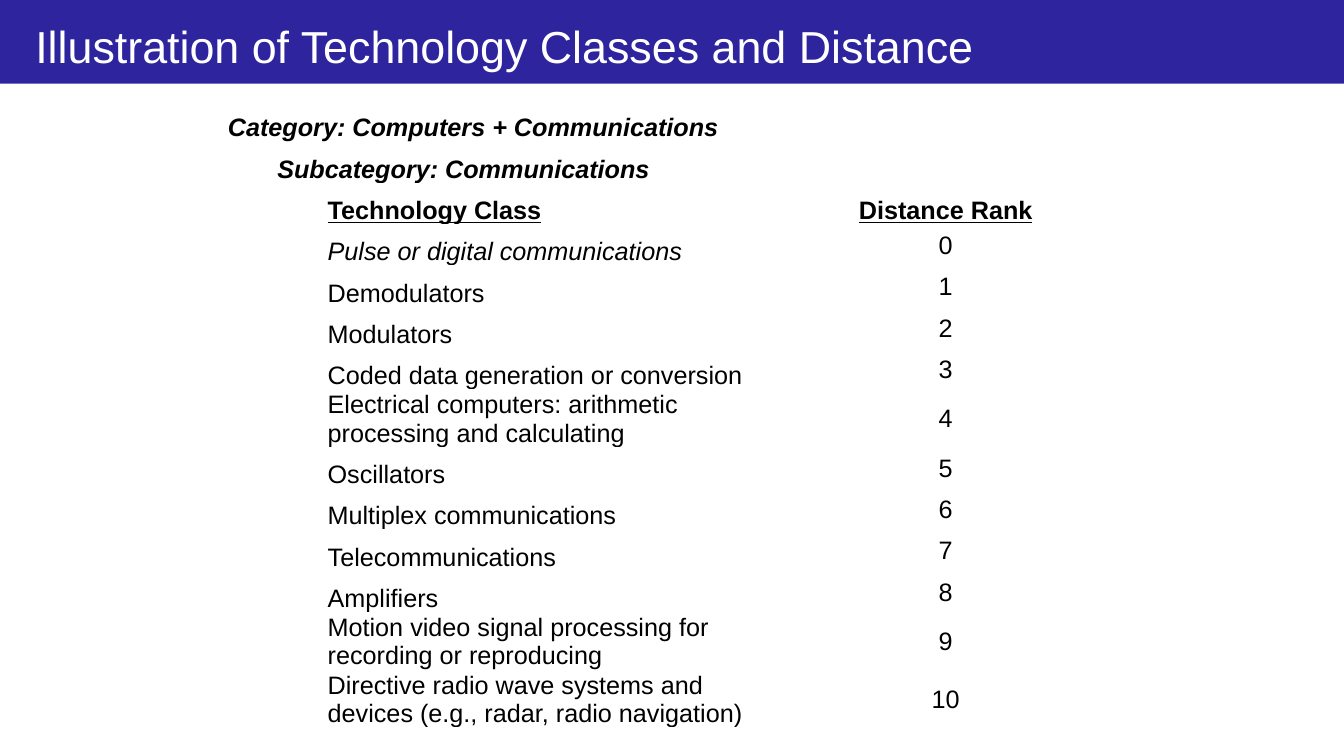
"""Build a slide listing technology classes by their distance rank."""
from dataclasses import dataclass

from pptx import Presentation
from pptx.dml.color import RGBColor
from pptx.enum.shapes import MSO_SHAPE as Shape
from pptx.enum.text import MSO_ANCHOR as Anchor, MSO_AUTO_SIZE as AutoSize, PP_ALIGN as Align
from pptx.slide import Slide
from pptx.table import _Cell as Cell
from pptx.text.text import TextFrame
from pptx.util import Inches, Pt

FONT = "Arial"
BLACK, WHITE, INDIGO = "000000", "FFFFFF", "2E249E"
ROW_HEIGHT = 0.41
COLUMN_WIDTHS = (5.67, 2.92)


@dataclass(frozen=True)
class Style:
    size: float = 18
    color: str = BLACK
    bold: bool = False
    italic: bool = False
    underline: bool = False


@dataclass(frozen=True)
class Entry:
    label: str
    style: Style = Style()
    indent: float = 1
    right: float = 0.1
    rank: str = ""


PLAIN = Style()
HEADING = Style(bold=True, italic=True)
COLUMN_HEADING = Style(bold=True, underline=True)
FOCAL_CLASS = "Pulse or digital communications"
HEADINGS = [
    Entry("Category: Computers + Communications", HEADING, 0.01, 0.01),
    Entry("Subcategory: Communications", HEADING, 0.5, 0.01),
    Entry("Technology Class", COLUMN_HEADING, right=0.01, rank="Distance Rank"),
]
CLASSES = [
    FOCAL_CLASS,
    "Demodulators",
    "Modulators",
    "Coded data generation or conversion",
    "Electrical computers: arithmetic processing and calculating",
    "Oscillators",
    "Multiplex communications",
    "Telecommunications",
    "Amplifiers",
    "Motion video signal processing for recording or reproducing",
    "Directive radio wave systems and devices (e.g., radar, radio navigation)",
]


def rgb(color: str) -> RGBColor:
    return RGBColor.from_string(color)


def write(frame: TextFrame, text: str, style: Style, align: Align = Align.LEFT) -> None:
    paragraph = frame.paragraphs[0]
    paragraph.alignment = align
    run = paragraph.add_run()
    run.text = text
    font = run.font
    font.name, font.size = FONT, Pt(style.size)
    font.bold, font.italic, font.underline = style.bold, style.italic, style.underline
    font.color.rgb = rgb(style.color)


def format_cell(cell: Cell, left: float, right: float, anchor: Anchor) -> None:
    cell.fill.background()
    cell.margin_left, cell.margin_right = Inches(left), Inches(right)
    cell.margin_top, cell.margin_bottom = Inches(0.01), Inches(0)
    cell.vertical_anchor = anchor


def add_title(slide: Slide, text: str) -> None:
    title = slide.shapes.title
    title.left, title.top = Inches(0.25), Inches(0.08)
    title.width, title.height = Inches(9.75), Inches(0.64)
    frame = title.text_frame
    frame.auto_size = AutoSize.NONE
    frame.vertical_anchor = Anchor.TOP
    frame.margin_top = Inches(0.11)
    write(frame, text, Style(size=32, color=WHITE))

    band = slide.shapes.add_shape(
        Shape.RECTANGLE, Inches(0), Inches(0), Inches(13.33), Inches(0.83))
    band.shadow.inherit = False
    band.fill.solid()
    band.fill.fore_color.rgb = rgb(INDIGO)
    band.line.fill.background()
    title.element.addprevious(band.element)


def add_rank_table(slide: Slide, entries: list[Entry]) -> None:
    table = slide.shapes.add_table(
        len(entries), len(COLUMN_WIDTHS), Inches(2.25), Inches(1),
        Inches(sum(COLUMN_WIDTHS)), Inches(ROW_HEIGHT * len(entries))).table
    table.first_row = table.horz_banding = False
    for column, width in zip(table.columns, COLUMN_WIDTHS):
        column.width = Inches(width)
    for index, entry in enumerate(entries):
        table.rows[index].height = Inches(ROW_HEIGHT)
        label, rank = table.cell(index, 0), table.cell(index, 1)
        format_cell(label, entry.indent, entry.right, Anchor.BOTTOM)
        write(label.text_frame, entry.label, entry.style)
        is_heading = entry.style.bold
        format_cell(rank, 0.01, 0.01, Anchor.BOTTOM if is_heading else Anchor.MIDDLE)
        if entry.rank:
            rank_style = entry.style if is_heading else PLAIN
            write(rank.text_frame, entry.rank, rank_style, Align.CENTER)
        else:
            label.merge(rank)


def main() -> None:
    presentation = Presentation()
    presentation.slide_width, presentation.slide_height = Inches(13.33), Inches(7.5)
    slide = presentation.slides.add_slide(presentation.slide_layouts[5])
    add_title(slide, "Illustration of Technology Classes and Distance")
    ranked = [
        Entry(name, Style(italic=name == FOCAL_CLASS), rank=str(rank))
        for rank, name in enumerate(CLASSES)
    ]
    add_rank_table(slide, HEADINGS + ranked)
    presentation.save("out.pptx")


if __name__ == "__main__":
    main()
